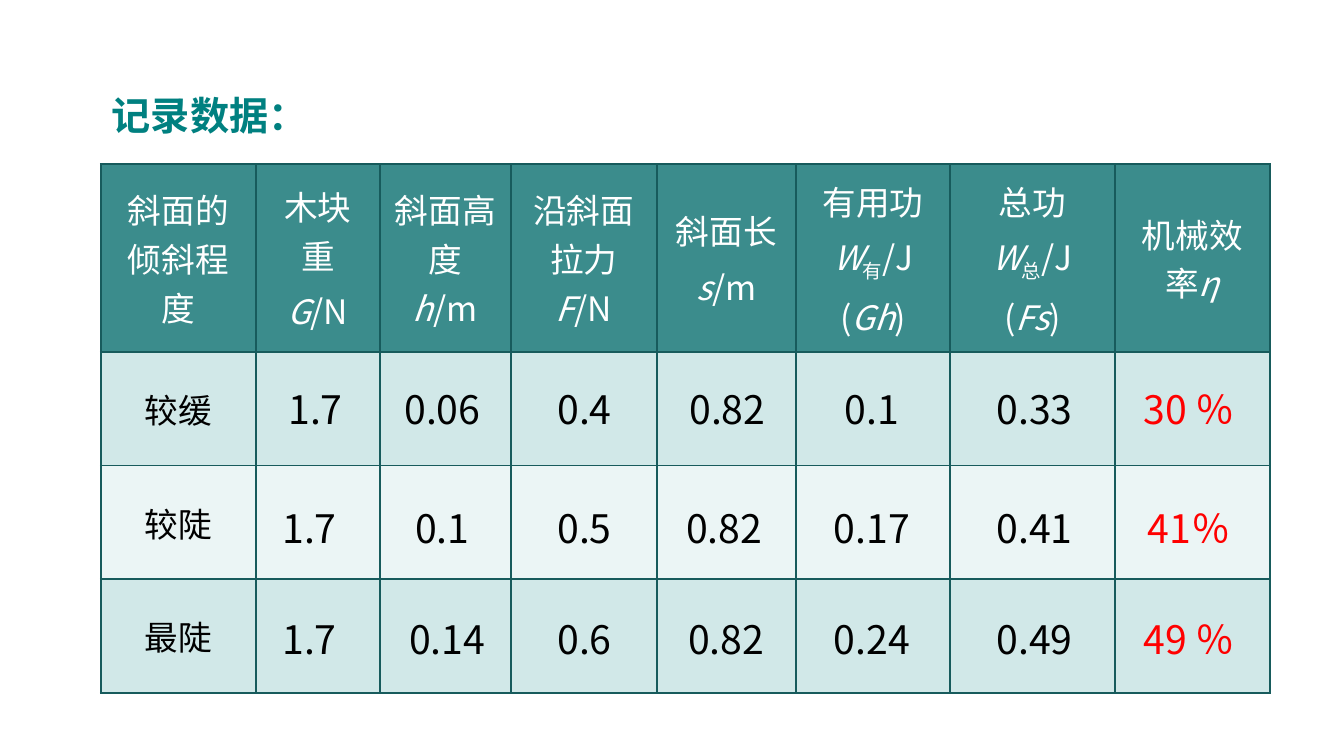
from lxml import etree
from pptx import Presentation
from pptx.dml.color import RGBColor
from pptx.enum.text import MSO_ANCHOR, PP_ALIGN
from pptx.oxml.ns import qn
from pptx.util import Cm, Pt

CENTER, LEFT = PP_ALIGN.CENTER, PP_ALIGN.LEFT
MIDDLE = MSO_ANCHOR.MIDDLE
FONT = "Noto Sans CJK SC"
TEAL, HEADER, BORDER = "008080", "3B8C8C", "175B5C"
BANDS = ["D1E8E8", "EBF5F5"]
WHITE, BLACK, RED = "FFFFFF", "000000", "FF0000"

# Content: a cell is a list of paragraphs, a paragraph a list of (text, style)
TITLE = "记录数据："
HEADINGS = [
    [[("斜面的倾斜程度", "")]],
    [[("木块重", "")], [("G", "italic"), ("/N", "")]],
    [[("斜面高度", ""), ("", "break"), ("h", "italic"), ("/m", "")]],
    [[("沿斜面拉力", ""), ("", "break"), ("F", "italic"), ("/N", "")]],
    [[("斜面长", "")], [("s", "italic"), ("/m", "")]],
    [[("有用功", "")], [("W", "italic"), ("有", "sub"), ("/J", "")],
     [("(", ""), ("Gh", "italic"), (")", "")]],
    [[("总功", "")], [("W", "italic"), ("总", "sub"), ("/J", "")],
     [("(", ""), ("Fs", "italic"), (")", "")]],
    [[("机械效率", ""), ("η", "italic")]],
]
SLOPES = ["较缓", "较陡", "最陡"]

# Measured values by column: colour, box width, then (text, centre x) by row
VALUES = [
    (BLACK, 2.4, [("1.7", 7.95), ("1.7", 7.8), ("1.7", 7.8)]),
    (BLACK, 3.05, [("0.06", 11.15), ("0.1", 11.15), ("0.14", 11.27)]),
    (BLACK, 2.4, [("0.4", 14.73), ("0.5", 14.73), ("0.6", 14.73)]),
    (BLACK, 2.7, [("0.82", 18.33), ("0.82", 18.25), ("0.82", 18.3)]),
    (BLACK, 2.67, [("0.1", 21.97), ("0.17", 21.97), ("0.24", 21.97)]),
    (BLACK, 2.67, [("0.33", 26.07), ("0.41", 26.07), ("0.49", 26.07)]),
    (RED, 3.2, [("30 ％", 29.97), ("41％", 29.97), ("49 ％", 29.97)]),
]

# Layout in centimetres
TABLE_LEFT, TABLE_TOP = 2.54, 4.14
COLUMN_WIDTHS = [3.91, 3.12, 3.3, 3.68, 3.51, 3.89, 4.14, 3.91]
ROW_HEIGHTS = [4.72, 2.87, 2.87, 2.87]
VALUE_TOPS = [9.58, 12.57, 15.37]
VALUE_HEIGHT = 1.45


def color(code):
    return RGBColor.from_string(code)


def write(frame, paragraphs, size, code, align=CENTER, bold=False):
    frame.word_wrap = True
    for index, spans in enumerate(paragraphs):
        para = frame.paragraphs[0] if index == 0 else frame.add_paragraph()
        para.alignment = align
        if index:
            para.space_before = Pt(size * 0.2)
        for text, style in spans:
            if style == "break":
                para.add_line_break()
                continue
            span = para.add_run()
            span.text = text
            font = span.font
            font.size, font.name, font.bold = Pt(size), FONT, bold
            font.italic = style == "italic"
            font.color.rgb = color(code)
            properties = font._element
            if style == "sub":
                properties.set("baseline", "-25000")
            etree.SubElement(properties, qn("a:ea")).set("typeface", FONT)


def add_text(left, top, width, height, text, code, **options):
    box = page.shapes.add_textbox(Cm(left), Cm(top), Cm(width), Cm(height))
    box.text_frame.vertical_anchor = MIDDLE
    write(box.text_frame, [[(text, "")]], 28, code, **options)
    return box


def style_cell(cell, fill_code):
    cell.vertical_anchor = MIDDLE
    cell.margin_left = cell.margin_right = Cm(0.33)
    cell.margin_top = cell.margin_bottom = Cm(0.13)
    properties = cell._tc.get_or_add_tcPr()
    for side in ("a:lnL", "a:lnR", "a:lnT", "a:lnB"):
        line = etree.SubElement(properties, qn(side), w=str(Pt(1.5)))
        fill = etree.SubElement(line, qn("a:solidFill"))
        etree.SubElement(fill, qn("a:srgbClr"), val=BORDER)
    cell.fill.solid()
    cell.fill.fore_color.rgb = color(fill_code)


deck = Presentation()
deck.slide_width, deck.slide_height = Cm(33.87), Cm(19.05)
page = deck.slides.add_slide(deck.slide_layouts[6])

# Title
title = add_text(2.57, 2.34, 6.9, 1.27, TITLE, TEAL, align=LEFT, bold=True)
title.text_frame.paragraphs[0].line_spacing = 0.9

# Table with headings and slope names
table = page.shapes.add_table(
    len(ROW_HEIGHTS), len(COLUMN_WIDTHS), Cm(TABLE_LEFT), Cm(TABLE_TOP),
    Cm(sum(COLUMN_WIDTHS)), Cm(sum(ROW_HEIGHTS))).table
for column, width in zip(table.columns, COLUMN_WIDTHS):
    column.width = Cm(width)
for number, (row, height) in enumerate(zip(table.rows, ROW_HEIGHTS)):
    row.height = Cm(height)
    for cell in row.cells:
        style_cell(cell, BANDS[(number - 1) % 2] if number else HEADER)
for number, heading in enumerate(HEADINGS):
    write(table.cell(0, number).text_frame, heading, 24, WHITE)
for number, slope in enumerate(SLOPES, 1):
    write(table.cell(number, 0).text_frame, [[(slope, "")]], 24, BLACK)

# Values laid over the table
for code, width, entries in VALUES:
    for (text, center), top in zip(entries, VALUE_TOPS):
        add_text(center - width / 2, top, width, VALUE_HEIGHT, text, code)

deck.save("out.pptx")
